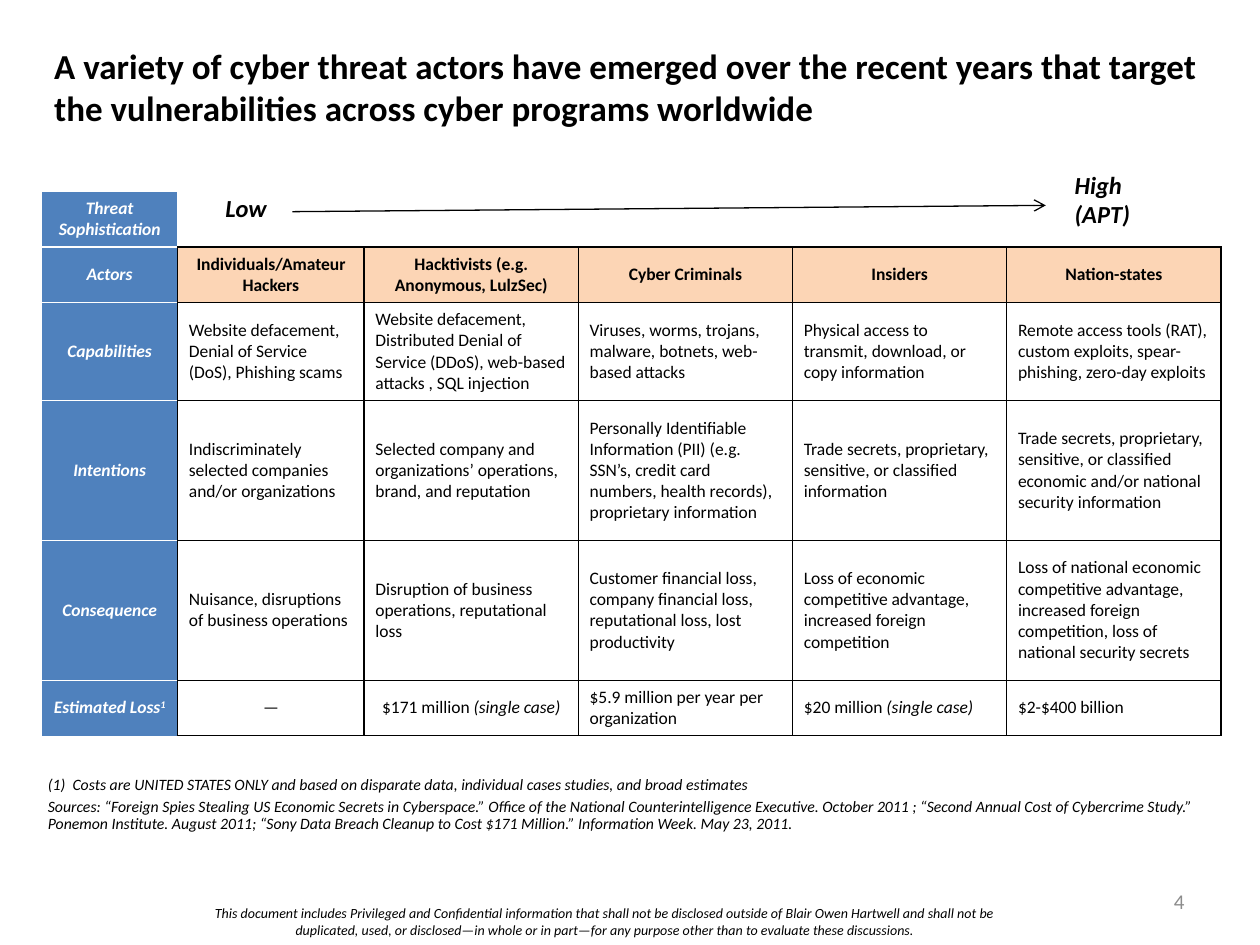
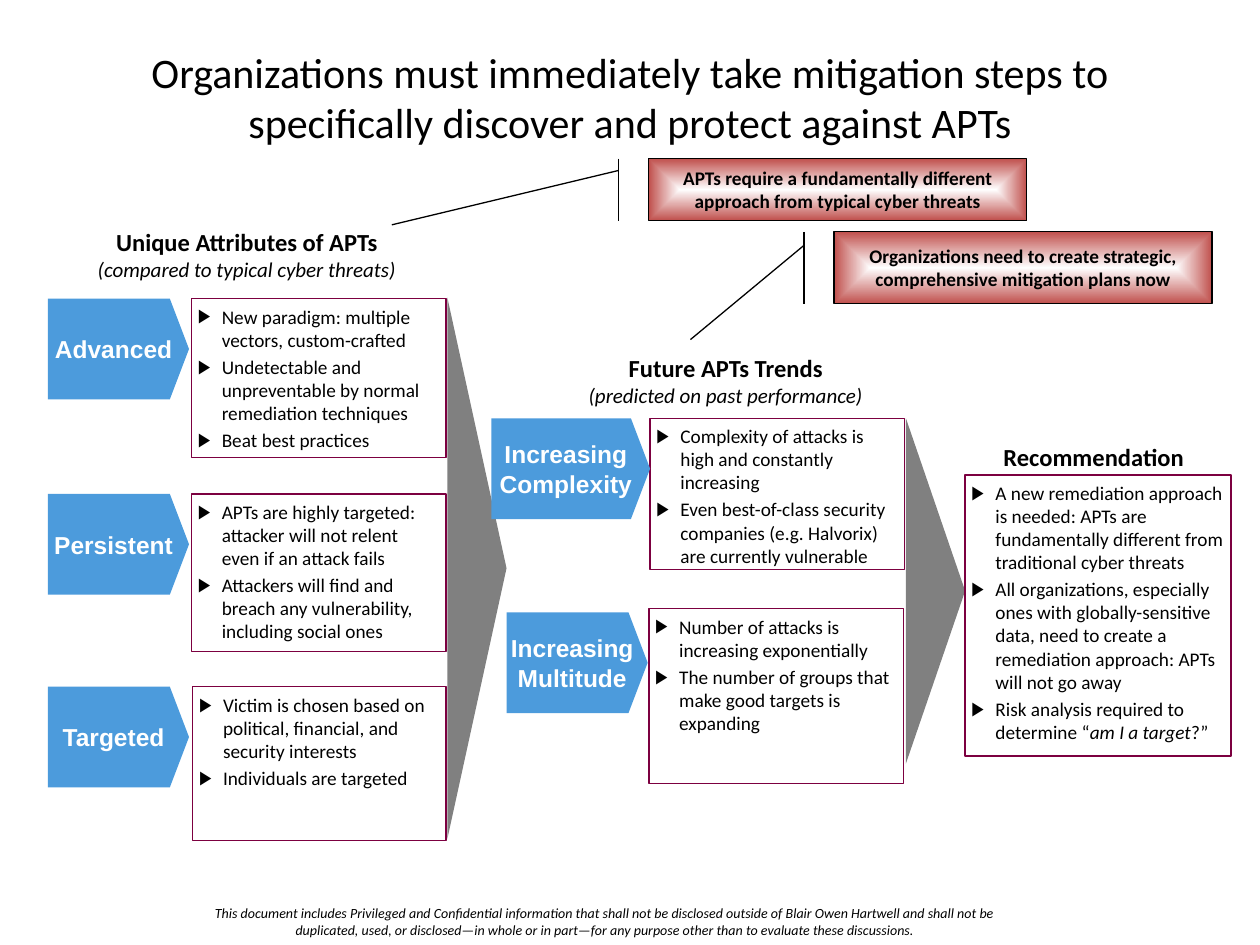
from dataclasses import dataclass

from lxml.etree import SubElement
from pptx import Presentation
from pptx.dml.color import RGBColor
from pptx.enum.shapes import MSO_CONNECTOR, MSO_SHAPE
from pptx.enum.text import MSO_ANCHOR, MSO_AUTO_SIZE, PP_ALIGN
from pptx.oxml.ns import qn
from pptx.util import Pt

EMU_PER_PX = 9144  # 100 px to the inch


@dataclass(frozen=True)
class Theme:
    # colours
    black: str = "000000"
    white: str = "FFFFFF"
    label: str = "4F81BD"
    actor: str = "FCD5B5"
    tag: str = "4C9BDC"
    outline: str = "7C0040"
    pointer: str = "808080"
    callout: str = "C0504D"
    number: str = "8C8C8C"
    # fonts
    body_font: str = "Calibri"
    tag_font: str = "Arial"
    # type sizes
    headline: int = 24
    title: int = 20
    heading: int = 14
    subheading: int = 12
    bullet: int = 11
    cell: int = 10
    note: int = 9
    footer: int = 8


THEME = Theme()


def px(length):
    return round(length * EMU_PER_PX)


def rgb(color):
    return RGBColor.from_string(color)


def write(frame, paras, size, font=THEME.body_font, color=THEME.black, bold=False,
          italic=False, align=PP_ALIGN.LEFT, gap=0, leading=None, bullet=None):
    """Fill a text frame; a para is a string or a list of strings and (string, changes)."""
    for index, content in enumerate(paras):
        para = frame.paragraphs[0] if index == 0 else frame.add_paragraph()
        para.alignment = align
        if bullet:
            properties = para._p.get_or_add_pPr()
            properties.set("marL", str(px(19)))
            properties.set("indent", str(px(-19)))
            SubElement(properties, qn("a:buFont"), typeface=THEME.tag_font)
            SubElement(properties, qn("a:buChar"), char=bullet)
        para.space_before = Pt(gap if index else 0)
        if leading:
            para.line_spacing = leading
        for part in [content] if isinstance(content, str) else content:
            text, changes = (part, {}) if isinstance(part, str) else part
            span = para.add_run()
            span.text = text
            span.font.name = font
            span.font.size = Pt(changes.get("size", size))
            span.font.bold = changes.get("bold", bold)
            span.font.italic = changes.get("italic", italic)
            span.font.color.rgb = rgb(color)
            if "raised" in changes:
                span._r.get_or_add_rPr().set("baseline", str(changes["raised"] * 1000))


def set_frame(frame, anchor=MSO_ANCHOR.TOP, inset=(10, 5)):
    across, down = inset
    frame.word_wrap = True
    frame.auto_size = MSO_AUTO_SIZE.NONE
    frame.vertical_anchor = anchor
    frame.margin_left = frame.margin_right = px(across)
    frame.margin_top = frame.margin_bottom = px(down)


def set_borders(cell, **sides):
    properties = cell._tc.get_or_add_tcPr()
    for side in ("L", "R", "T", "B"):
        color = sides.get(side)
        line = SubElement(properties, qn(f"a:ln{side}"), w=str(Pt(1)))
        if color:
            fill = SubElement(line, qn("a:solidFill"))
            SubElement(fill, qn("a:srgbClr"), val=color)
        else:
            SubElement(line, qn("a:noFill"))


class Deck:
    def __init__(self, theme):
        self.theme = theme
        self.deck = Presentation()
        self.deck.slide_width, self.deck.slide_height = px(1000), px(750)
        self.page = None

    def add_page(self, title, place, **style):
        self.page = self.deck.slides.add_slide(self.deck.slide_layouts[5])
        holder = self.page.shapes.title
        holder.left, holder.top, holder.width, holder.height = map(px, place)
        set_frame(holder.text_frame, MSO_ANCHOR.MIDDLE)
        write(holder.text_frame, [title], **style)
        self.text((155, 718, 651, 27), [FOOTER], inset=(0, 0), size=self.theme.footer,
                  italic=True, align=PP_ALIGN.CENTER)

    def text(self, place, paras, anchor=MSO_ANCHOR.TOP, inset=(10, 5), **style):
        box = self.page.shapes.add_textbox(*map(px, place))
        set_frame(box.text_frame, anchor, inset)
        write(box.text_frame, paras, **style)

    def shape(self, kind, place, fill=None, line=None, adjust=()):
        shape = self.page.shapes.add_shape(kind, *map(px, place))
        shape.shadow.inherit = False
        for index, value in enumerate(adjust):
            shape.adjustments[index] = value
        if fill:
            shape.fill.solid()
            shape.fill.fore_color.rgb = rgb(fill)
        if line:
            shape.line.color.rgb = rgb(line)
            shape.line.width = Pt(0.75)
        else:
            shape.line.fill.background()
        return shape

    def bullets(self, place, paras):
        panel = self.shape(MSO_SHAPE.RECTANGLE, place, self.theme.white, self.theme.outline)
        set_frame(panel.text_frame, inset=(5, 5))
        write(panel.text_frame, paras, size=self.theme.bullet, gap=2.2, bullet="▶")

    def tag(self, place, paras):
        tag = self.shape(MSO_SHAPE.PENTAGON, place, self.theme.tag, adjust=[0.19])
        set_frame(tag.text_frame, MSO_ANCHOR.MIDDLE, (2, 2))
        write(tag.text_frame, paras, size=self.theme.heading, font=self.theme.tag_font,
              color=self.theme.white, bold=True, align=PP_ALIGN.CENTER)

    def heading(self, place, title, subtitle=None):
        paras = [title]
        if subtitle:
            small = dict(size=self.theme.subheading, bold=False, italic=True)
            paras.append([(subtitle, small)])
        self.text(place, paras, inset=(5, 5), size=self.theme.heading, bold=True,
                  align=PP_ALIGN.CENTER)

    def pointer(self, left, top, width, height):
        """A triangle pointing right, placed by its frame after the turn."""
        shift = (height - width) / 2
        triangle = self.shape(MSO_SHAPE.ISOSCELES_TRIANGLE,
                              (left - shift, top + shift, height, width), self.theme.pointer)
        triangle.rotation = 90

    def callout(self, place, message, adjust):
        callout = self.shape(MSO_SHAPE.LINE_CALLOUT_1_BORDER_AND_ACCENT_BAR, place,
                             line=self.theme.black, adjust=adjust)
        callout.fill.gradient()
        stops = zip(callout.fill.gradient_stops, (self.theme.white, self.theme.callout))
        for position, (stop, color) in enumerate(stops):
            stop.position = position
            stop.color.rgb = rgb(color)
        gradient = callout._element.spPr.find(qn("a:gradFill"))
        gradient.remove(gradient.find(qn("a:lin")))
        glow = SubElement(gradient, qn("a:path"), {"path": "shape"})
        SubElement(glow, qn("a:fillToRect"), {side: "50000" for side in "ltrb"})
        set_frame(callout.text_frame, MSO_ANCHOR.MIDDLE)
        write(callout.text_frame, [message], size=self.theme.bullet, bold=True,
              align=PP_ALIGN.CENTER)

    def arrow(self, start, end):
        arrow = self.page.shapes.add_connector(MSO_CONNECTOR.STRAIGHT, *map(px, start + end))
        arrow.line.color.rgb = rgb(self.theme.black)
        arrow.line.width = Pt(0.75)
        SubElement(arrow.line._get_or_add_ln(), qn("a:tailEnd"), type="arrow")
        SubElement(arrow._element.spPr, qn("a:effectLst"))

    def matrix(self, place, widths, heights, rows):
        frame = self.page.shapes.add_table(len(heights), len(widths), *map(px, place))
        table = frame.table
        table.first_row = table.horz_banding = False
        for column, width in zip(table.columns, widths):
            column.width = px(width)
        for row, height in zip(table.rows, heights):
            row.height = px(height)
        table.cell(0, 1).merge(table.cell(0, len(widths) - 1))
        for row, contents in enumerate(rows):
            for column in range(len(widths)):
                content = contents[column] if column < len(contents) else None
                self.matrix_cell(table.cell(row, column), row, column, content, len(rows) - 1)

    def matrix_cell(self, cell, row, column, content, last):
        black, white = self.theme.black, self.theme.white
        fill, style = white, {}
        if column == 0:
            set_borders(cell, R=black if row else white, T=white if row else None,
                        B=white if row < last else None)
            fill = self.theme.label
            style = dict(color=white, bold=True, italic=True)
        elif row == 0:
            set_borders(cell, L=white if column == 1 else None, B=black)
        else:
            set_borders(cell, L=black, R=black, T=black, B=black)
            if row == 1:
                fill, style = self.theme.actor, dict(bold=True)
        cell.fill.solid()
        cell.fill.fore_color.rgb = rgb(fill)
        cell.vertical_anchor = MSO_ANCHOR.MIDDLE
        cell.margin_left = cell.margin_right = px(9)
        cell.margin_top = cell.margin_bottom = px(5)
        if content:
            centred = column == 0 or row == 1 or (row == last and column < 3)
            write(cell.text_frame, [content], size=self.theme.cell,
                  align=PP_ALIGN.CENTER if centred else PP_ALIGN.LEFT, **style)


FOOTER = ("This document includes Privileged and Confidential information that shall not be "
          "disclosed outside of Blair Owen Hartwell and shall not be duplicated, used, or "
          "disclosed—in whole or in part—for any purpose other than to evaluate these discussions.")
SINGLE_CASE = ("(single case)", dict(italic=True))

THREAT_ROWS = [
    ["Threat Sophistication"],
    ["Actors", "Individuals/Amateur Hackers", "Hacktivists (e.g. Anonymous, LulzSec)",
     "Cyber Criminals", "Insiders", "Nation-states"],
    ["Capabilities", "Website defacement, Denial of Service (DoS), Phishing scams",
     "Website defacement, Distributed Denial of Service (DDoS), web-based attacks , SQL injection",
     "Viruses, worms, trojans, malware, botnets, web-based attacks",
     "Physical access to transmit, download, or copy information",
     "Remote access tools (RAT), custom exploits, spear-phishing, zero-day exploits"],
    ["Intentions", "Indiscriminately selected companies and/or organizations",
     "Selected company and organizations’ operations, brand, and reputation",
     "Personally Identifiable Information (PII) (e.g. SSN’s, credit card numbers, "
     "health records), proprietary information",
     "Trade secrets, proprietary, sensitive, or classified information",
     "Trade secrets, proprietary, sensitive, or classified economic and/or national "
     "security information"],
    ["Consequence", "Nuisance, disruptions of business operations",
     "Disruption of business operations, reputational loss",
     "Customer financial loss, company financial loss, reputational loss, lost productivity",
     "Loss of economic competitive advantage, increased foreign competition",
     "Loss of national economic competitive advantage, increased foreign competition, "
     "loss of national security secrets"],
    [["Estimated Loss", ("1", dict(raised=30))], "—", ["$171 million ", SINGLE_CASE],
     "$5.9 million per year per organization", ["$20 million ", SINGLE_CASE],
     "$2-$400 billion"],
]


def add_threat_actors(deck):
    theme = deck.theme
    deck.add_page("A variety of cyber threat actors have emerged over the recent years that "
                  "target the vulnerabilities across cyber programs worldwide",
                  (33, 30, 930, 78), size=theme.title, bold=True)
    deck.matrix((33, 152, 936, 432), [108, 148] + [170] * 4, [44, 44, 78, 111, 111, 44],
                THREAT_ROWS)
    # Sophistication scale
    for place, level in [((169, 148, 60, 34), "Low"), ((843, 130, 98, 57), "High (APT)")]:
        deck.text(place, [level], size=theme.heading, bold=True, italic=True)
    deck.arrow((232, 168), (830, 163))
    # Notes and page number
    deck.text((38, 616, 929, 45), [
        "(1)  Costs are UNITED STATES ONLY and based on disparate data, individual cases "
        "studies, and broad estimates",
        "Sources: “Foreign Spies Stealing US Economic Secrets in Cyberspace.” Office of the "
        "National Counterintelligence Executive. October 2011 ; “Second Annual Cost of "
        "Cybercrime Study.” Ponemon Institute. August 2011; “Sony Data Breach Cleanup to Cost "
        "$171 Million.” Information Week. May 23, 2011.",
    ], MSO_ANCHOR.BOTTOM, (0, 0), size=theme.note, italic=True, gap=2.7, leading=0.9)
    deck.text((717, 695, 233, 40), ["4"], MSO_ANCHOR.MIDDLE, size=theme.subheading,
              color=theme.number, align=PP_ALIGN.RIGHT)


def add_mitigation_steps(deck):
    deck.add_page("Organizations must immediately take mitigation steps to specifically "
                  "discover and protect against APTs", (50, 14, 900, 125),
                  size=deck.theme.headline, align=PP_ALIGN.CENTER)
    # Unique attributes
    deck.heading((38, 175, 316, 54), "Unique Attributes of APTs",
                 "(compared to typical cyber threats)")
    attributes = [
        ("Advanced", (152, 237, 202, 126),
         ["New paradigm: multiple vectors, custom-crafted",
          "Undetectable and unpreventable by normal remediation techniques",
          "Beat best practices"]),
        ("Persistent", (152, 392, 202, 125),
         ["APTs are highly targeted: attacker will not relent even if an attack fails",
          "Attackers will find and breach any vulnerability, including social ones"]),
        ("Targeted", (153, 545, 201, 122),
         ["Victim is chosen based on political, financial, and security interests",
          "Individuals are targeted"]),
    ]
    for name, place, points in attributes:
        deck.bullets(place, points)
        deck.tag((38, place[1], 112, 80), [name])
    deck.pointer(355, 236, 47, 430)
    # Future trends
    deck.heading((418, 275, 316, 54), "Future APTs Trends", "(predicted on past performance)")
    deck.bullets((516, 332, 202, 120),
                 ["Complexity of attacks is high and constantly increasing",
                  "Even best-of-class security companies (e.g. Halvorix) are currently vulnerable"])
    deck.tag((390, 332, 126, 80), ["Increasing", "Complexity"])
    deck.bullets((515, 483, 202, 139),
                 ["Number of attacks is increasing exponentially",
                  "The number of groups that make good targets is expanding"])
    deck.tag((402, 486, 112, 80), ["Increasing Multitude"])
    deck.pointer(719, 332, 47, 274)
    # Recommendation
    deck.bullets((766, 377, 211, 223), [
        "A new remediation approach is needed: APTs are fundamentally different from "
        "traditional cyber threats",
        "All organizations, especially ones with globally-sensitive data, need to create a "
        "remediation approach: APTs will not go away",
        ["Risk analysis required to determine “", ("am I a target", dict(italic=True)), "?”"]])
    deck.heading((765, 346, 206, 34), "Recommendation")
    # Callouts
    deck.callout((515, 126, 300, 49), "APTs require a fundamentally different approach from "
                 "typical cyber threats", (0.19, -0.08, 1.07, -0.68))
    deck.callout((662, 184, 300, 57), "Organizations need to create strategic, comprehensive "
                 "mitigation plans now", (0.19, -0.08, 1.5, -0.38))


def main():
    deck = Deck(THEME)
    add_threat_actors(deck)
    add_mitigation_steps(deck)
    deck.deck.save("out.pptx")


if __name__ == "__main__":
    main()
